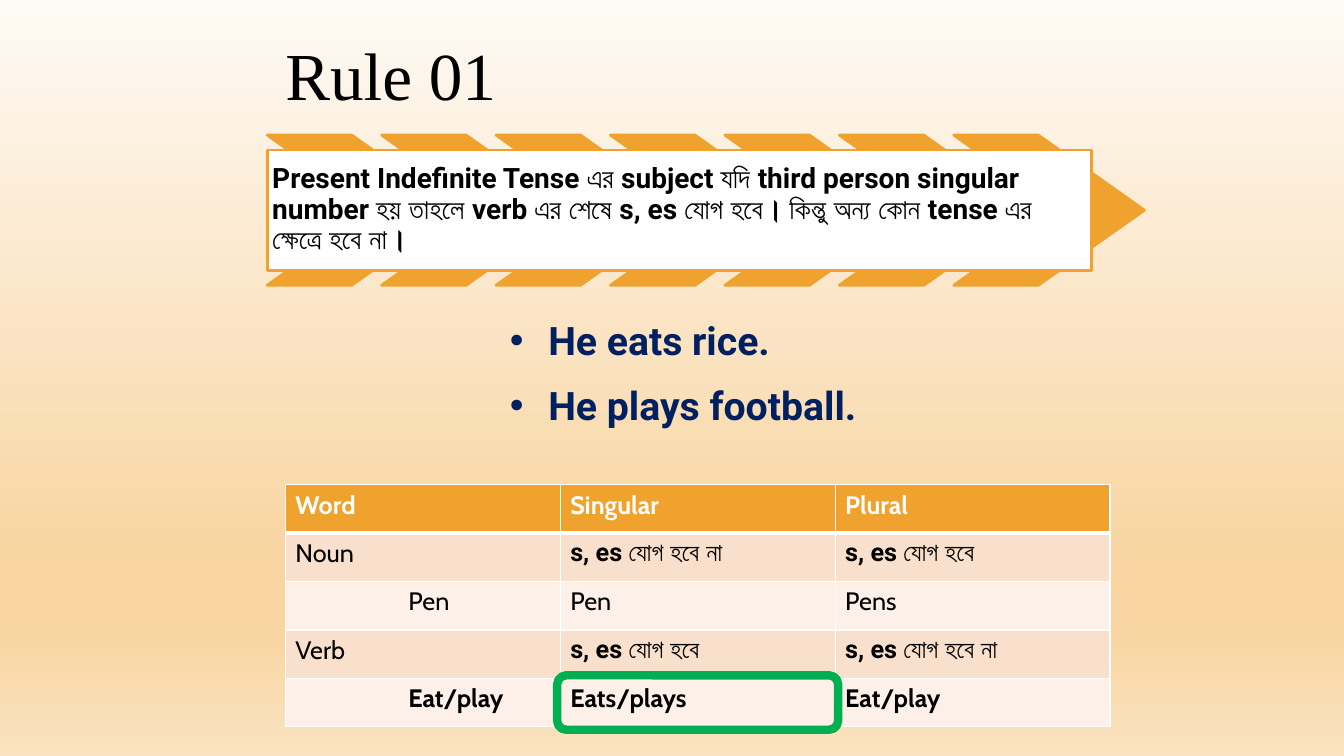
from dataclasses import dataclass
from lxml import etree
from pptx import Presentation
from pptx.dml.color import RGBColor
from pptx.enum.shapes import MSO_SHAPE as SHAPE
from pptx.enum.text import MSO_ANCHOR as ANCHOR, PP_ALIGN as ALIGN
from pptx.oxml.ns import qn
from pptx.util import Emu, Inches, Pt


@dataclass(frozen=True)
class Theme:
    """Colours, fonts and type sizes of the deck."""
    orange: str = "F0A22E"
    white: str = "FFFFFF"
    black: str = "000000"
    navy: str = "002060"
    green: str = "00B050"
    bands: tuple = ("F9E0CD", "FCF0E8")
    backdrop: tuple = ((0, "FEFAF5"), (74, "F8D5A1"), (83, "F8D5A1"), (100, "FAE3C0"))
    serif: str = "Times New Roman"
    sans: str = "Roboto"
    body: str = "Cabin"
    title_size: int = 48
    example_size: int = 28
    rule_size: int = 20
    table_size: int = 18


T = Theme()
RULE = ("Present Indefinite Tense এর subject যদি third person singular number হয় তাহলে "
        "verb এর শেষে s, es যোগ হবে। কিন্তু অন্য কোন tense এর ক্ষেত্রে হবে না।")
EXAMPLES = ("He eats rice.", "He plays football.")
ADD, NO_ADD = "s, es যোগ হবে", "s, es যোগ হবে না"
ROWS = (("Word", "Singular", "Plural"),
        ("Noun", NO_ADD, ADD),
        ("Pen", "Pen", "Pens"),
        ("Verb", ADD, NO_ADD),
        ("Eat/play", "Eats/plays", "Eat/play"))
INDENTED_ROWS = (2, 4)
BOLD_ROWS = (0, 4)


def sub(parent, tag, **attrs):
    """Append a DrawingML child and return it."""
    return etree.SubElement(parent, qn(tag), attrs)


def apply(obj, **values):
    """Set each named attribute on obj."""
    for name, value in values.items():
        setattr(obj, name, value)


def inches(box):
    """Turn a box in inches into lengths."""
    return [Inches(v) for v in box]


def write(p, text, size, font, color, bold=False):
    """Add one formatted run to a paragraph."""
    r = p.add_run()
    r.text = text
    apply(r.font, size=Pt(size), name=font, bold=bold)
    r.font.color.rgb = RGBColor.from_string(color)


def frame(sp, anchor, inset):
    """Prepare a wrapping text frame with equal insets."""
    tf = sp.text_frame
    sides = ("left", "top", "right", "bottom")
    apply(tf, word_wrap=True, vertical_anchor=anchor,
          **{f"margin_{side}": Inches(inset) for side in sides})
    return tf


def add_outlined(s, kind, box, fill, line, width):
    """Add a flat preset shape with an optional fill."""
    sp = s.shapes.add_shape(kind, *inches(box))
    sp.shadow.inherit = False
    if fill:
        sp.fill.solid()
        sp.fill.fore_color.rgb = RGBColor.from_string(fill)
    else:
        sp.fill.background()
    sp.line.color.rgb = RGBColor.from_string(line)
    sp.line.width = Pt(width)
    return sp


def add_backdrop(s):
    """Fill the slide with a vertical gradient."""
    s.background.fill.gradient()
    grad = s.element.find(".//" + qn("a:gradFill"))
    for child in list(grad):
        grad.remove(child)
    stops = sub(grad, "a:gsLst")
    for pos, color in T.backdrop:
        sub(sub(stops, "a:gs", pos=str(pos * 1000)), "a:srgbClr", val=color)
    sub(grad, "a:lin", ang="5400000", scaled="0")


def add_title(s, box):
    """Place the slide heading."""
    tf = frame(s.shapes.add_textbox(*inches(box)), ANCHOR.BOTTOM, 0.2)
    p = tf.paragraphs[0]
    p.line_spacing = 0.9
    write(p, "Rule 01", T.title_size, T.serif, T.black)


def add_rule(s, box, count=7):
    """Place a row of chevrons with the rule panel over it."""
    x, y, w, h = box
    chevron_w = 1.89
    pitch = (w - chevron_w) / (count - 1)
    for i in range(count):
        sp = add_outlined(s, SHAPE.CHEVRON, (x + i * pitch, y, chevron_w, h),
                          T.orange, T.orange, 2)
        sp.adjustments[0] = 0.706
    panel = add_outlined(s, SHAPE.RECTANGLE, (x, y + h * 0.1, w * 0.94, h * 0.8),
                         T.white, T.orange, 2)
    p = frame(panel, ANCHOR.MIDDLE, 0.05).paragraphs[0]
    apply(p, alignment=ALIGN.LEFT, line_spacing=0.9)
    write(p, RULE, T.rule_size, T.sans, T.black, True)


def add_examples(s, box):
    """Place the bulleted example sentences."""
    tf = s.shapes.add_textbox(*inches(box)).text_frame
    tf.word_wrap = True
    indent = Inches(0.38)
    for i, text in enumerate(EXAMPLES):
        p = tf.add_paragraph() if i else tf.paragraphs[0]
        apply(p, line_spacing=1.15, space_after=Pt(8))
        pPr = p._p.get_or_add_pPr()
        pPr.set("marL", str(indent))
        pPr.set("indent", str(-indent))
        sub(pPr, "a:buFont", typeface="Arial")
        sub(pPr, "a:buChar", char="•")
        sub(sub(pPr, "a:tabLst"), "a:tab", pos=str(Inches(0.5)), algn="l")
        write(p, text, T.example_size, T.sans, T.navy, True)


def style_cell(cell, row, text, indented):
    """Border, fill and write one table cell."""
    tcPr = cell._tc.get_or_add_tcPr()
    heavy = {0: "B", 1: "T"}.get(row)
    for side in "LRTB":
        width = Pt(3 if side == heavy else 1)
        ln = sub(tcPr, f"a:ln{side}", w=str(width))
        sub(sub(ln, "a:solidFill"), "a:srgbClr", val=T.white)
    cell.fill.solid()
    color = T.bands[(row - 1) % 2] if row else T.orange
    cell.fill.fore_color.rgb = RGBColor.from_string(color)
    if indented:
        cell.margin_left = Inches(1.22)
    suffix = text in (ADD, NO_ADD)
    write(cell.text_frame.paragraphs[0], text, T.table_size,
          T.sans if suffix else T.body, T.black if row else T.white,
          suffix or row in BOLD_ROWS)


def add_word_table(s, box):
    """Place the word table and ring its singular verb cell."""
    x, y, w, h = box
    n_rows, n_cols = len(ROWS), len(ROWS[0])
    table = s.shapes.add_table(n_rows, n_cols, *inches(box)).table
    for col in table.columns:
        col.width = Emu(Inches(w) // n_cols)
    for i, row in enumerate(ROWS):
        for j, text in enumerate(row):
            style_cell(table.cell(i, j), i, text, j == 0 and i in INDENTED_ROWS)
    col_w, row_h, pad = w / n_cols, h / n_rows, 0.03
    ring = (x + col_w - pad, y + (n_rows - 1) * row_h - pad,
            col_w + 2 * pad, row_h + 2 * pad)
    add_outlined(s, SHAPE.ROUNDED_RECTANGLE, ring, None, T.green, 6)


def main():
    """Build and save the slide."""
    prs = Presentation()
    apply(prs, slide_width=Inches(13.33), slide_height=Inches(7.5))
    s = prs.slides.add_slide(prs.slide_layouts[6])
    add_backdrop(s)
    add_title(s, (2.63, 0.61, 8.07, 0.73))
    add_rule(s, (2.65, 1.34, 8.7, 1.49))
    add_examples(s, (4.96, 3.02, 4.5, 1.28))
    add_word_table(s, (2.83, 4.81, 8.18, 2.4))
    prs.save("out.pptx")


if __name__ == "__main__":
    main()
